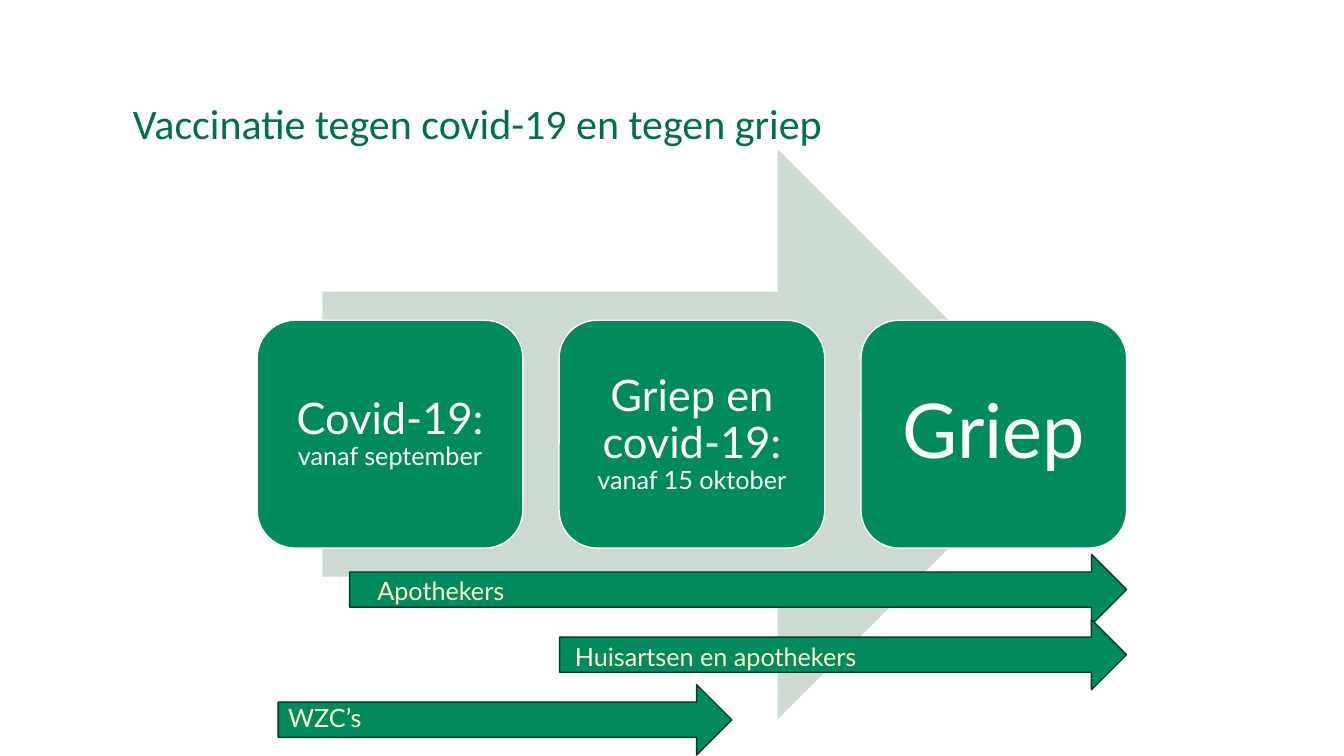
import pptx
import pptx.util
import pptx.dml.color
import pptx.enum.shapes
import pptx.enum.text

RGBColor = pptx.dml.color.RGBColor
SHAPES = pptx.enum.shapes.MSO_SHAPE
ALIGN = pptx.enum.text.PP_ALIGN
ANCHOR = pptx.enum.text.MSO_ANCHOR

TITLE_GREEN = RGBColor(0x00, 0x71, 0x46)
GREEN = RGBColor(0x00, 0x8A, 0x5E)
DARK_GREEN = RGBColor(0x00, 0x3C, 0x29)
PALE_GREEN = RGBColor(0xCC, 0xDA, 0xD2)
CREAM = RGBColor(0xFF, 0xFF, 0xCC)
WHITE = RGBColor(0xFF, 0xFF, 0xFF)

EMU_PER_PX = 9525


def px(length):
    return pptx.util.Emu(round(length * EMU_PER_PX))


def write(shape, runs, font="Lato", color=WHITE, align=ALIGN.LEFT,
          anchor=ANCHOR.TOP, spacing=1.0, inset=None):
    """Fill a shape with one paragraph of (text, size) runs."""
    frame = shape.text_frame
    frame.word_wrap = True
    frame.vertical_anchor = anchor
    if inset is not None:
        frame.margin_left = frame.margin_right = px(inset)
        frame.margin_top = frame.margin_bottom = px(inset)
    paragraph = frame.paragraphs[0]
    paragraph.alignment = align
    paragraph.line_spacing = spacing
    for text, size in runs:
        run = paragraph.add_run()
        run.text = text
        run.font.name = font
        run.font.size = pptx.util.Pt(size)
        run.font.color.rgb = color


def add_block(slide, kind, box, fill, line=None):
    shape = slide.shapes.add_shape(kind, *map(px, box))
    shape.shadow.inherit = False
    shape.fill.solid()
    shape.fill.fore_color.rgb = fill
    if line is None:
        shape.line.fill.background()
    else:
        shape.line.color.rgb = line
        shape.line.width = pptx.util.Pt(1)
    return shape


def add_title(slide, box, text):
    title = slide.shapes.title
    title.left, title.top, title.width, title.height = map(px, box)
    write(title, [(text, 30)], font="Calibri", color=TITLE_GREEN,
          anchor=ANCHOR.MIDDLE, spacing=0.9)


def add_process(slide, box, phases):
    """Large arrow with equally spaced phases across its middle."""
    left, top, width, height = box
    add_block(slide, SHAPES.RIGHT_ARROW,
              (left + 62, top, 705, height), PALE_GREEN)
    phase_width, phase_height = 253, 217
    step = (width - phase_width) / (len(phases) - 1)
    phase_top = top + (height - phase_height) / 2
    for index, (runs, inset) in enumerate(phases):
        phase = add_block(
            slide, SHAPES.ROUNDED_RECTANGLE,
            (left + index * step, phase_top, phase_width, phase_height),
            GREEN, WHITE)
        write(phase, runs, align=ALIGN.CENTER, anchor=ANCHOR.MIDDLE,
              spacing=0.9, inset=inset)


def add_periods(slide, box, periods):
    """Rows of arrows, each with its label on top."""
    left, top, width, height = box
    arrow_height = 67
    step = (height - arrow_height) / (len(periods) - 1)
    for index, (start, length, *_) in enumerate(periods):
        add_block(slide, SHAPES.RIGHT_ARROW,
                  (left + start, top + index * step, length, arrow_height),
                  GREEN, DARK_GREEN)
    for index, (start, _, indent, drop, text) in enumerate(periods):
        label = slide.shapes.add_textbox(
            px(left + start + indent), px(top + index * step + drop),
            px(342), px(38))
        write(label, [(text, 18)], color=CREAM)


def main():
    presentation = pptx.Presentation()
    presentation.slide_width = px(1280)
    presentation.slide_height = px(720)
    slide = presentation.slides.add_slide(presentation.slide_layouts[5])

    add_title(slide, (117, 58, 1068, 124),
              "Vaccinatie tegen covid-19 en tegen griep")
    add_process(slide, (245, 142, 828, 543), [
        ([("Covid-19: ", 31), ("vanaf september", 18)], 12),
        ([("Griep en covid-19: ", 31), ("vanaf 15 oktober", 18)], 12),
        ([("Griep", 54)], 22),
    ])
    # Start, length, label indent, label drop, label
    add_periods(slide, (265, 528, 808, 191), [
        (68, 740, 17, 15, "Apothekers"),
        (268, 540, 5, 16, "Huisartsen en apothekers"),
        (0, 432, 0, 12, "WZC’s"),
    ])
    presentation.save("out.pptx")


if __name__ == "__main__":
    main()
